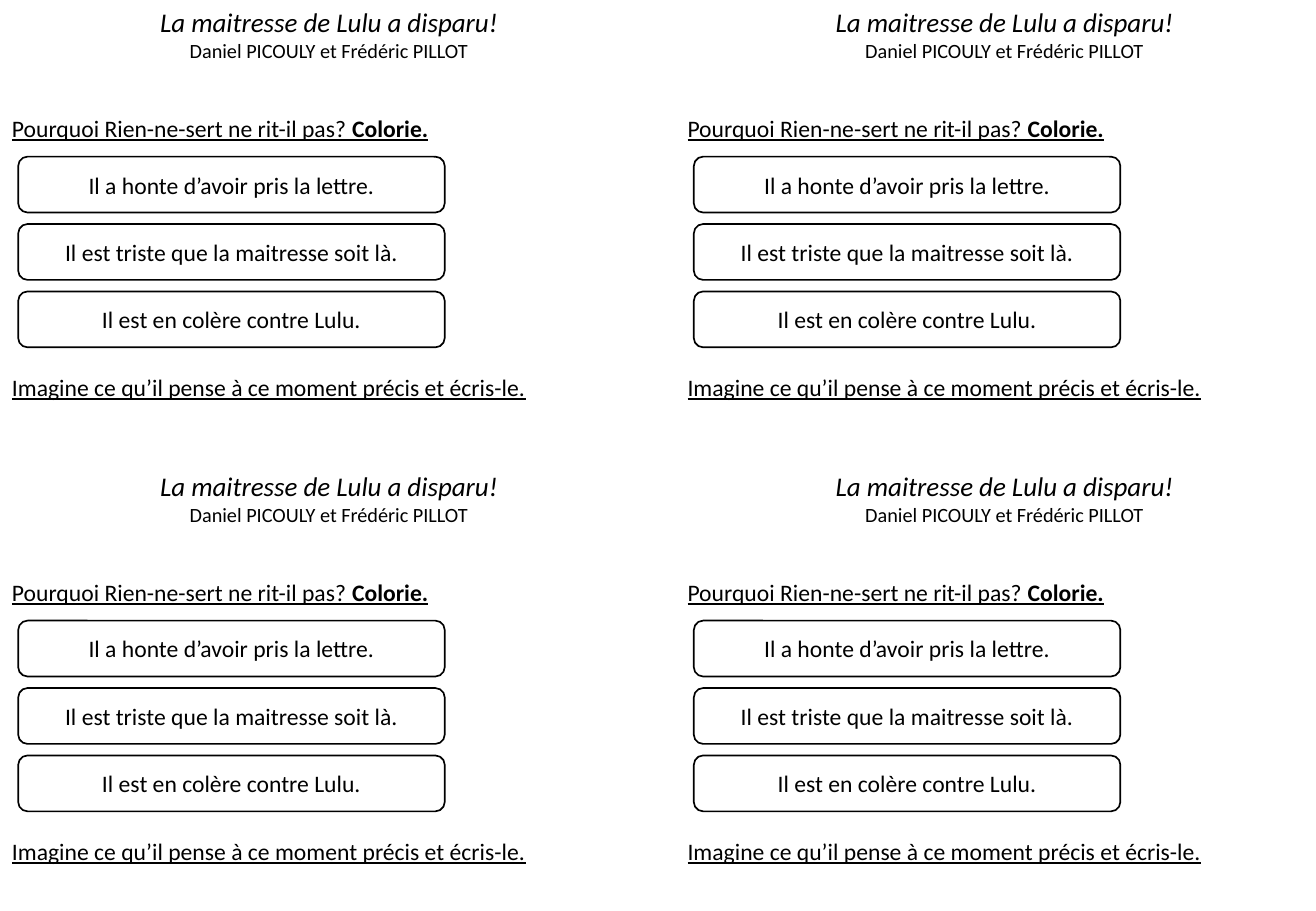
from dataclasses import dataclass
from itertools import product

from pptx import Presentation
from pptx.dml.color import RGBColor as Rgb
from pptx.enum.shapes import MSO_SHAPE as Shape
from pptx.enum.text import MSO_ANCHOR as Anchor, MSO_AUTO_SIZE as Fit, PP_ALIGN as Align
from pptx.util import Inches, Pt

TITLE = "La maitresse de Lulu a disparu!"
AUTHORS = "Daniel PICOULY et Frédéric PILLOT"
QUESTION = "Pourquoi Rien-ne-sert ne rit-il pas? "
ACTION = "Colorie."
TASK = "Imagine ce qu’il pense à ce moment précis et écris-le."
ANSWERS = [
    "Il a honte d’avoir pris la lettre.",
    "Il est triste que la maitresse soit là.",
    "Il est en colère contre Lulu.",
]


@dataclass(frozen=True)
class Theme:
    font: str = "Calibri"
    ink: Rgb = Rgb(0, 0, 0)
    paper: Rgb = Rgb(255, 255, 255)
    title: int = 16
    small: int = 12
    body: int = 14
    line: int = 1


THEME = Theme()

# Inches: the sheet, its 2 x 2 grid of cards, and the answers in a card
WIDTH, HEIGHT = 10.83, 7.5
COLS = ROWS = 2
COL_STEP, ROW_STEP = 5.56, 3.82
CARD_W, CARD_H = WIDTH / COLS, 3.35
BOX_X, BOX_Y, BOX_STEP = 0.15, 1.29, 0.555
BOX_W, BOX_H = 3.51, 0.46
# Points: room above the question and above the writing task
ASK_GAP, TASK_GAP = 30.5, 136.7


def style(para, size, align=Align.LEFT, gap=0):
    para.alignment = align
    para.space_before = Pt(gap)
    font = para.font
    font.name, font.size = THEME.font, Pt(size)
    font.color.rgb = THEME.ink
    return font


def add_text(group, x, y):
    frame = group.shapes.add_textbox(*map(Inches, (x, y, CARD_W, CARD_H))).text_frame
    frame.word_wrap = True
    frame.auto_size = Fit.SHAPE_TO_FIT_TEXT
    head = frame.paragraphs[0]
    names, ask, task = (frame.add_paragraph() for _ in range(3))

    head.text, names.text, task.text = TITLE, AUTHORS, TASK
    style(head, THEME.title, Align.CENTER).italic = True
    style(names, THEME.small, Align.CENTER)

    ask.add_run().text = QUESTION
    action = ask.add_run()
    action.text, action.font.bold = ACTION, True
    for para, gap in ((ask, ASK_GAP), (task, TASK_GAP)):
        style(para, THEME.body, gap=gap)
        for run in para.runs:
            run.font.underline = True


def add_answer(group, text, x, y):
    box = group.shapes.add_shape(
        Shape.ROUNDED_RECTANGLE, *map(Inches, (x, y, BOX_W, BOX_H)))
    box.shadow.inherit = False
    box.fill.solid()
    box.fill.fore_color.rgb = THEME.paper
    box.line.color.rgb = THEME.ink
    box.line.width = Pt(THEME.line)
    frame = box.text_frame
    frame.word_wrap = True
    frame.vertical_anchor = Anchor.MIDDLE
    para = frame.paragraphs[0]
    para.text = text
    style(para, THEME.body, Align.CENTER)


def add_card(slide, x, y):
    group = slide.shapes.add_group_shape()
    add_text(group, x, y)
    for i, text in enumerate(ANSWERS):
        add_answer(group, text, x + BOX_X, y + BOX_Y + i * BOX_STEP)


def main():
    deck = Presentation()
    deck.slide_width, deck.slide_height = Inches(WIDTH), Inches(HEIGHT)
    blank = deck.slide_layouts.get_by_name("Blank")
    slide = deck.slides.add_slide(blank)
    for row, col in product(range(ROWS), range(COLS)):
        add_card(slide, col * COL_STEP, row * ROW_STEP)
    deck.save("out.pptx")


if __name__ == "__main__":
    main()
